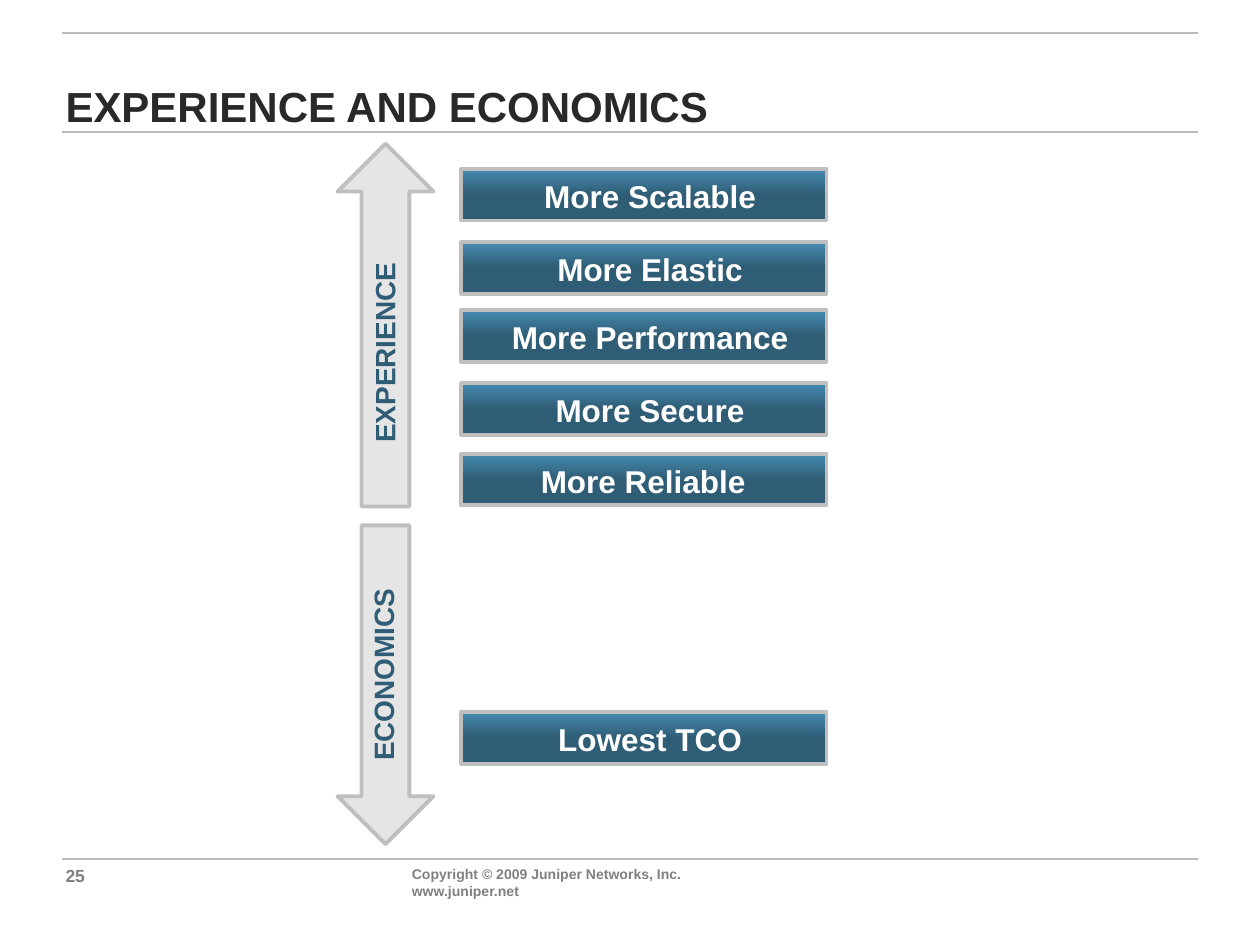
"""Build the Experience and Economics slide."""
from pptx import Presentation
from pptx.dml.color import RGBColor
from pptx.enum import shapes, text
from pptx.oxml.ns import qn
from pptx.util import Inches, Pt
from lxml import etree

RULE = RGBColor(0xBA, 0xBC, 0xBE)
FOOTER = RGBColor(0x80, 0x7F, 0x83)
HEADING = RGBColor(0x29, 0x29, 0x29)
BORDER = RGBColor(0xBF, 0xBF, 0xBF)
ARROW = RGBColor(0xE6, 0xE5, 0xE6)
LIGHT_BLUE = RGBColor(0x46, 0x8B, 0xB1)
DARK_BLUE = RGBColor(0x2F, 0x5D, 0x76)
WHITE = RGBColor(0xFF, 0xFF, 0xFF)

BOTTOM, MIDDLE, TOP = (text.MSO_ANCHOR.BOTTOM, text.MSO_ANCHOR.MIDDLE,
                       text.MSO_ANCHOR.TOP)
LEFT, CENTER = text.PP_ALIGN.LEFT, text.PP_ALIGN.CENTER
HEADING_INSETS = (0, 0.05, 0.1, 0.05)

deck = Presentation()
deck.slide_width, deck.slide_height = Inches(10), Inches(7.5)
slide = deck.slides.add_slide(deck.slide_layouts[6])


def add_label(wording, place, size, color, anchor, insets, align=LEFT, spacing=None):
    label = slide.shapes.add_textbox(*map(Inches, place))
    frame = label.text_frame
    frame.word_wrap = True
    frame.vertical_anchor = anchor
    for side, inset in zip(("left", "top", "right", "bottom"), insets):
        setattr(frame, f"margin_{side}", Inches(inset))
    paragraph = frame.paragraphs[0]
    paragraph.text = wording
    paragraph.alignment = align
    paragraph.line_spacing = spacing
    for name, value in {"name": "Arial", "size": Pt(size), "bold": True}.items():
        setattr(paragraph.font, name, value)
    paragraph.font.color.rgb = color
    return label


def add_outlined(kind, place):
    outlined = slide.shapes.add_shape(kind, *map(Inches, place))
    outlined.shadow.inherit = False
    outlined.line.color.rgb = BORDER
    outlined.line.width = Pt(2.25)
    return outlined


for y in (6.82, 1.05, 0.26):
    rule = slide.shapes.add_connector(
        shapes.MSO_CONNECTOR.STRAIGHT, Inches(0.49), Inches(y), Inches(9.51), Inches(y))
    rule.line.color.rgb = RULE
    rule.line.width = Pt(1)
    etree.SubElement(rule._element.spPr, qn("a:effectLst"))

add_label("25", (0.52, 6.81, 0.58, 0.22), 10, FOOTER, BOTTOM, (0, 0, 0, 0))
add_label("Copyright © 2009 Juniper Networks, Inc.\vwww.juniper.net",
          (3.17, 6.82, 3.25, 0.24), 8, FOOTER, TOP, (0.1, 0.05, 0.1, 0.05))
add_label("EXPERIENCE AND ECONOMICS", (0.52, 0.28, 8.99, 0.81), 24, HEADING,
          BOTTOM, HEADING_INSETS, spacing=0.9)

benefits = [
    ("More Scalable", 1.34, 3.93, 2.46),
    ("More Elastic", 1.92, 3.93, 2.46),
    ("More Performance", 2.46, 3.93, 2.46),
    ("More Secure", 3.04, 3.93, 2.46),
    ("More Reliable", 3.6, 3.71, 2.79),
    ("Lowest TCO", 5.65, 3.93, 2.46),
]
for benefit, y, label_x, label_width in benefits:
    bar = add_outlined(shapes.MSO_SHAPE.ROUNDED_RECTANGLE, (3.66, y, 2.9, 0.41))
    bar.adjustments[0] = 0
    bar.fill.gradient()
    bar.fill.gradient_angle = 270
    for stop, (position, color) in zip(bar.fill.gradient_stops,
                                       ((0, LIGHT_BLUE), (0.5, DARK_BLUE))):
        stop.position = position
        stop.color.rgb = color
    add_label(benefit, (label_x, y + 0.06, label_width, 0.31), 18, WHITE,
              MIDDLE, (0.1, 0, 0.1, 0), CENTER)

directions = [
    ("EXPERIENCE", shapes.MSO_SHAPE.UP_ARROW, 1.14, 2.88, (1.86, 2.54, 2.33, 0.42)),
    ("ECONOMICS", shapes.MSO_SHAPE.DOWN_ARROW, 4.17, 2.53, (1.83, 5.08, 2.34, 0.45)),
]
for direction, kind, y, height, label_place in directions:
    arrow = add_outlined(kind, (2.68, y, 0.76, height))
    arrow.fill.solid()
    arrow.fill.fore_color.rgb = ARROW
    add_label(direction, label_place, 16, DARK_BLUE, BOTTOM, HEADING_INSETS,
              CENTER, 0.9).rotation = 270

deck.save("out.pptx")
